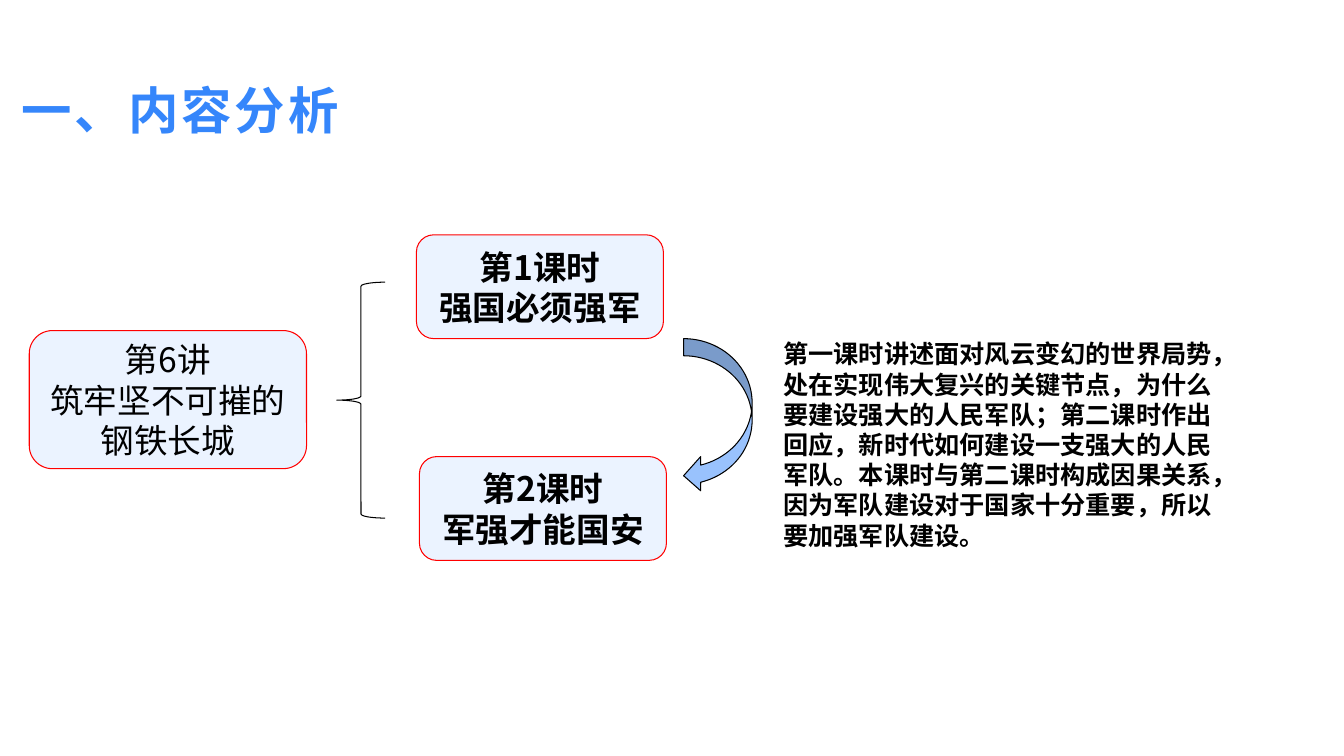
import pptx
import pptx.dml.color
import pptx.enum.shapes
import pptx.enum.text
import pptx.oxml.ns
import pptx.util
from lxml import etree

EMU_PER_PX = 9144
FONT = "Noto Sans CJK SC"
SHAPE = pptx.enum.shapes.MSO_SHAPE
ALIGN = pptx.enum.text.PP_ALIGN
ANCHOR = pptx.enum.text.MSO_ANCHOR


def px(*lengths):
    """Turn lengths in px into EMU."""
    return [pptx.util.Emu(n * EMU_PER_PX) for n in lengths]


def rgb(value):
    """Turn a hex string into a colour."""
    return pptx.dml.color.RGBColor.from_string(value)


def write(tf, lines, size, color="000000", bold=False, align=ALIGN.LEFT, spacing=0):
    """Fill a text frame with one paragraph per line."""
    tf.word_wrap = True
    for i, line in enumerate(lines):
        p = tf.add_paragraph() if i else tf.paragraphs[0]
        p.text = line
        p.alignment = align
        font = p.font
        font.name = FONT
        font.size = pptx.util.Pt(size)
        font.bold = bold
        font.color.rgb = rgb(color)
        props = p._p.pPr.find(pptx.oxml.ns.qn("a:defRPr"))
        etree.SubElement(props, pptx.oxml.ns.qn("a:ea"), typeface=FONT)
        if spacing:
            props.set("spc", str(spacing))


def add_outline(s, kind, box, fill=None, line="000000"):
    """Add a preset shape with a thin line and an optional fill."""
    sp = s.shapes.add_shape(kind, *px(*box))
    sp.shadow.inherit = False
    if fill:
        sp.fill.solid()
        sp.fill.fore_color.rgb = rgb(fill)
    else:
        sp.fill.background()
    sp.line.color.rgb = rgb(line)
    sp.line.width = pptx.util.Pt(0.75)
    return sp


def add_card(s, box, lines, bold=True):
    """Add a rounded card with centred text."""
    sp = add_outline(s, SHAPE.ROUNDED_RECTANGLE, box, "EBF3FF", "FF0000")
    tf = sp.text_frame
    tf.vertical_anchor = ANCHOR.MIDDLE
    write(tf, lines, 24, bold=bold, align=ALIGN.CENTER)


def add_title(s, box, text):
    """Add the slide heading."""
    tf = s.shapes.add_textbox(*px(*box)).text_frame
    tf.vertical_anchor = ANCHOR.BOTTOM
    tf.margin_left, tf.margin_top, tf.margin_right, tf.margin_bottom = px(7, 3, 7, 3)
    write(tf, [text], 36, "3586FB", bold=True, spacing=220)


def add_note(s, box, text):
    """Add a bold paragraph whose box grows with its text."""
    tf = s.shapes.add_textbox(*px(*box)).text_frame
    tf.auto_size = pptx.enum.text.MSO_AUTO_SIZE.SHAPE_TO_FIT_TEXT
    write(tf, [text], 18, bold=True)


def main():
    """Build the slide and save it."""
    prs = pptx.Presentation()
    prs.slide_width, prs.slide_height = px(1333, 750)
    s = prs.slides.add_slide(prs.slide_layouts[6])
    add_title(s, (14, 64, 637, 77), "一、内容分析")
    add_card(s, (29, 328, 275, 137), ["第6讲", "筑牢坚不可摧的钢铁长城"], bold=False)
    add_card(s, (413, 233, 245, 103), ["第1课时", "强国必须强军"])
    add_note(s, (767, 331, 457, 222),
             "第一课时讲述面对风云变幻的世界局势，处在实现伟大复兴的关键节点，"
             "为什么要建设强大的人民军队；第二课时作出回应，新时代如何建设一支"
             "强大的人民军队。本课时与第二课时构成因果关系，因为军队建设对于国家"
             "十分重要，所以要加强军队建设。")
    add_outline(s, SHAPE.LEFT_BRACE, (334, 280, 48, 234))
    add_outline(s, SHAPE.CURVED_LEFT_ARROW, (678, 336, 68, 153), "99C2FD")
    add_card(s, (416, 453, 245, 103), ["第2课时", "军强才能国安"])
    prs.save("out.pptx")


if __name__ == "__main__":
    main()
